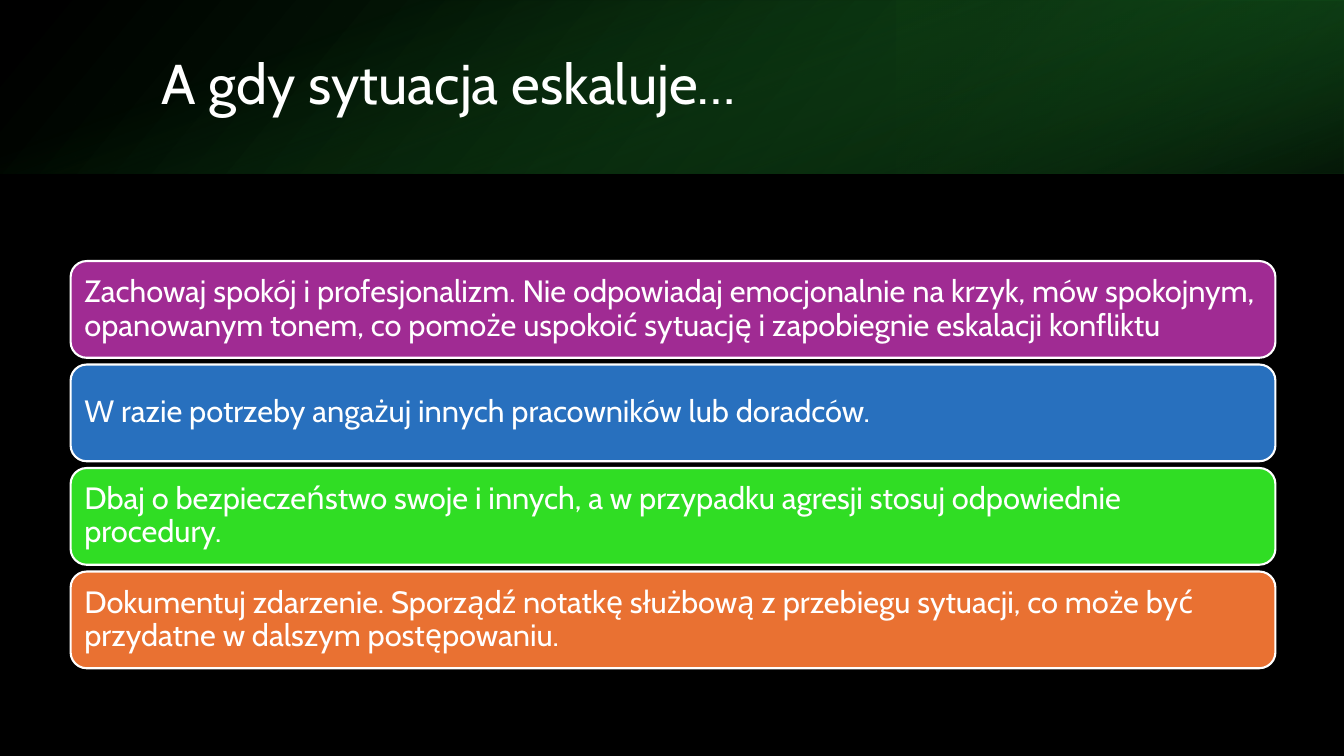
from dataclasses import dataclass

from lxml import etree
from pptx import Presentation
from pptx.dml.color import RGBColor
from pptx.enum.shapes import MSO_SHAPE
from pptx.enum.text import MSO_ANCHOR, MSO_AUTO_SIZE, PP_ALIGN
from pptx.oxml.ns import qn
from pptx.shapes.autoshape import Shape
from pptx.slide import Slide
from pptx.text.text import TextFrame
from pptx.util import Inches, Pt

RECT = MSO_SHAPE.RECTANGLE
ROUND = MSO_SHAPE.ROUNDED_RECTANGLE
MIDDLE = MSO_ANCHOR.MIDDLE
LEFT = PP_ALIGN.LEFT
NO_FIT = MSO_AUTO_SIZE.NONE

FONT = "Cabin"
HUES = {
    "black": "000000",
    "white": "FFFFFF",
    "deep": "13501B",
    "dark": "0D3612",
    "green": "196B24",
    "purple": "A02B93",
    "blue": "2870BE",
    "lime": "30DD24",
    "orange": "E97132",
}
CARD_TOP = 2.59
CARD_SPAN = 3.08


@dataclass
class Stop:
    place: float
    hue: str
    alpha: int


@dataclass
class Band:
    left: float
    top: float
    width: float
    height: float
    turn: int
    flip: bool
    angle: int
    stops: tuple[Stop, Stop]


@dataclass
class Card:
    hue: str
    text: str


BANDS = [
    Band(0, 0, 13.33, 1.72, 0, True, 140,
         (Stop(0, "black", 96), Stop(1, "deep", 100))),
    Band(8.89, 0, 4.44, 1.72, 180, True, 320,
         (Stop(0.19, "dark", 68), Stop(1, "green", 79))),
    Band(5.8, -5.8, 1.72, 13.33, 90, False, 340,
         (Stop(0.23, "green", 0), Stop(0.99, "black", 74))),
]
CARDS = [
    Card("purple", "Zachowaj spokój i profesjonalizm. Nie odpowiadaj emocjonalnie na krzyk, "
                   "mów spokojnym, opanowanym tonem, co pomoże uspokoić sytuację "
                   "i zapobiegnie eskalacji konfliktu"),
    Card("blue", "W razie potrzeby angażuj innych pracowników lub doradców."),
    Card("lime", "Dbaj o bezpieczeństwo swoje i innych, a w przypadku agresji "
                 "stosuj odpowiednie procedury."),
    Card("orange", "Dokumentuj zdarzenie. Sporządź notatkę służbową z przebiegu sytuacji, "
                   "co może być przydatne w dalszym postępowaniu."),
]


def tint(name: str) -> RGBColor:
    return RGBColor.from_string(HUES[name])


def add_shape(slide: Slide, kind: MSO_SHAPE, left: float, top: float,
              width: float, height: float) -> Shape:
    shape = slide.shapes.add_shape(
        kind, Inches(left), Inches(top), Inches(width), Inches(height))
    shape.shadow.inherit = False
    return shape


def write(frame: TextFrame, text: str, size: int) -> None:
    frame.word_wrap = True
    frame.auto_size = NO_FIT
    frame.vertical_anchor = MIDDLE
    line = frame.paragraphs[0]
    line.alignment = LEFT
    line.line_spacing = 0.9
    run = line.add_run()
    run.text = text
    run.font.name = FONT
    run.font.size = Pt(size)
    run.font.color.rgb = tint("white")


def draw_band(slide: Slide, band: Band) -> None:
    shape = add_shape(slide, RECT, band.left, band.top, band.width, band.height)
    shape.rotation = band.turn
    shape.line.fill.background()
    shape.fill.gradient()
    shape.fill.gradient_angle = 360 - band.angle
    for mark, stop in zip(shape.fill.gradient_stops, band.stops):
        mark.position = stop.place
        mark.color.rgb = tint(stop.hue)
    props = shape._element.spPr
    for color, stop in zip(props.iter(qn("a:srgbClr")), band.stops):
        etree.SubElement(color, qn("a:alpha")).set("val", str(stop.alpha * 1000))
    if band.flip:
        props.find(qn("a:xfrm")).set("flipH", "1")


def draw_title(slide: Slide, text: str) -> None:
    title = slide.shapes.title
    title.left, title.top = Inches(1.5), Inches(0.38)
    title.width, title.height = Inches(10.98), Inches(0.96)
    write(title.text_frame, text, 40)
    slide.shapes._spTree.append(title._element)


def draw_card(slide: Slide, card: Card, top: float) -> None:
    shape = add_shape(slide, ROUND, 0.7, top, 11.95, 0.96)
    shape.fill.solid()
    shape.fill.fore_color.rgb = tint(card.hue)
    shape.line.color.rgb = tint("white")
    shape.line.width = Pt(1.5)
    frame = shape.text_frame
    frame.margin_left = frame.margin_right = Inches(0.09)
    write(frame, card.text, 22)


def main() -> None:
    deck = Presentation()
    deck.slide_width, deck.slide_height = Inches(13.33), Inches(7.5)
    slide = deck.slides.add_slide(deck.slide_layouts[5])
    back = slide.background.fill
    back.solid()
    back.fore_color.rgb = tint("black")
    for band in BANDS:
        draw_band(slide, band)
    draw_title(slide, "A gdy sytuacja eskaluje…")
    step = CARD_SPAN / (len(CARDS) - 1)
    for row, card in enumerate(CARDS):
        draw_card(slide, card, CARD_TOP + row * step)
    deck.save("out.pptx")


if __name__ == "__main__":
    main()
